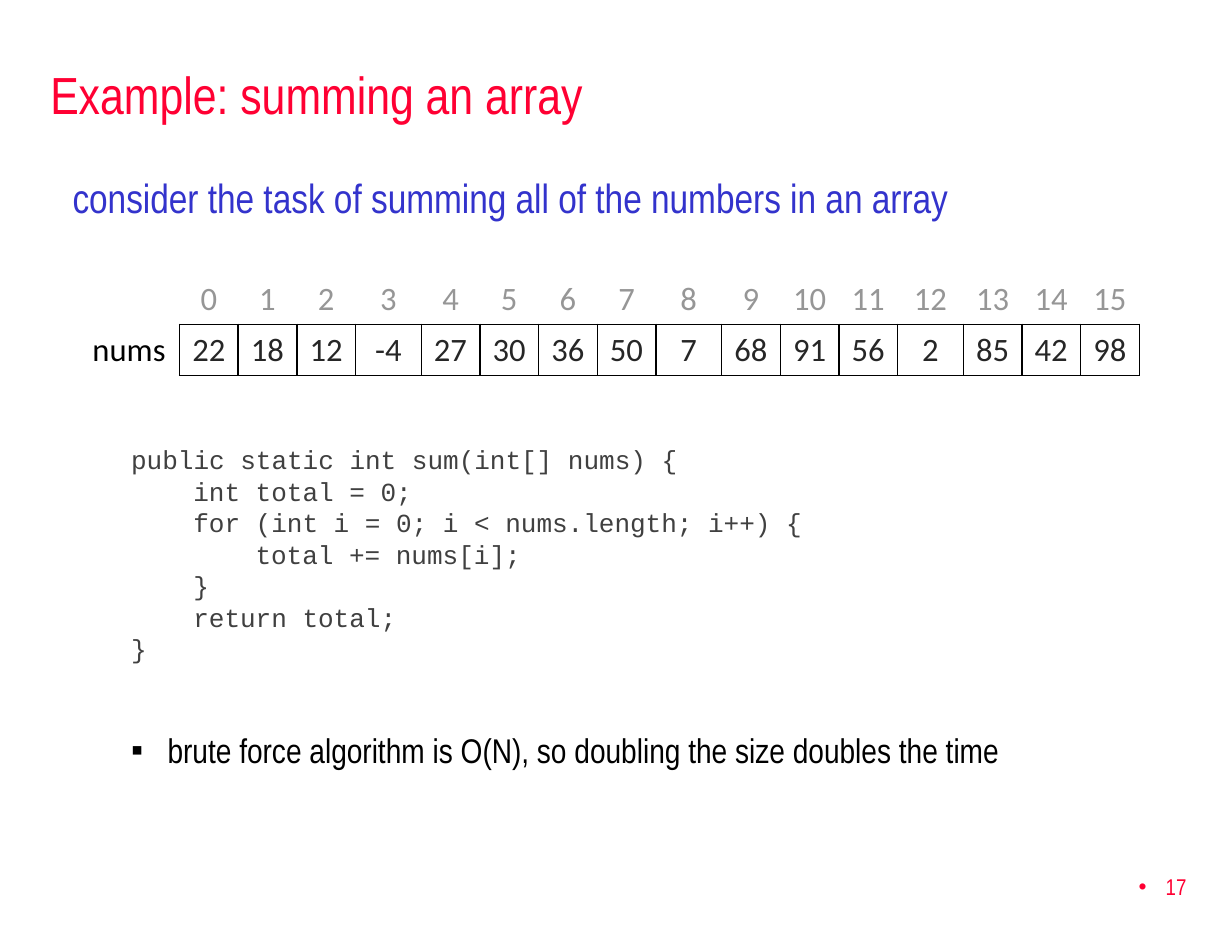
"""Build the slide on summing an array."""
from dataclasses import dataclass

from lxml import etree
from pptx import Presentation
from pptx import util as u
from pptx.dml import color
from pptx.enum import text
from pptx.oxml import ns


@dataclass(frozen=True)
class Theme:
    """Hold the colours, fonts and type sizes."""
    red: str = "FF0033"
    blue: str = "3333CC"
    black: str = "000000"
    ink: str = "262626"
    code: str = "404040"
    grey: str = "969696"
    sans: str = "Arial Narrow"
    mono: str = "Courier New"
    cell: str = "Calibri"
    title: int = 32
    lead: int = 25
    point: int = 21
    table: int = 20
    small: int = 16
    foot: int = 14


class Deck:
    """Draw styled elements on the current slide."""

    def __init__(self, theme, wide, high):
        """Start a file with one blank slide."""
        self.theme = theme
        self.file = Presentation()
        self.file.slide_width = u.Inches(wide)
        self.file.slide_height = u.Inches(high)
        self.slide = self.file.slides.add_slide(self.file.slide_layouts[6])

    def put(self, item, form):
        """Set each format value on an item."""
        for name, value in form.items():
            setattr(item, name, value)

    def line(self, para, words, font, size, tint, form=None):
        """Write one paragraph of a single style."""
        self.put(para, form or {})
        run = para.add_run()
        run.text = words
        self.put(run.font, {"name": font, "size": u.Pt(size), "bold": False})
        run.font.color.rgb = color.RGBColor.from_string(tint)

    def dent(self, para, left, hang=0, mark=None):
        """Indent a paragraph and give it a bullet if asked."""
        props = para._p.get_or_add_pPr()
        props.set("marL", str(u.Inches(left)))
        props.set("indent", str(u.Inches(-hang)))
        if mark:
            etree.SubElement(props, ns.qn("a:buFont")).set("typeface", "Arial")
            etree.SubElement(props, ns.qn("a:buChar")).set("char", mark)

    def box(self, spot, rows, anchor=text.MSO_ANCHOR.TOP):
        """Add a text box of (style, indent) paragraphs."""
        frame = self.slide.shapes.add_textbox(*map(u.Inches, spot)).text_frame
        self.put(frame, {"word_wrap": True, "vertical_anchor": anchor})
        for i, (style, dent) in enumerate(rows):
            para = frame.add_paragraph() if i else frame.paragraphs[0]
            self.line(para, *style)
            self.dent(para, *dent)

    def edge(self, cell, sides):
        """Rule the named sides of a cell and clear the others."""
        props = cell._tc.get_or_add_tcPr()
        for side in "LRTB":
            rule = etree.SubElement(props, ns.qn(f"a:ln{side}"), w=str(u.Pt(1)))
            if side in sides:
                fill = etree.SubElement(rule, ns.qn("a:solidFill"))
                etree.SubElement(fill, ns.qn("a:srgbClr"), val=self.theme.black)
            else:
                etree.SubElement(rule, ns.qn("a:noFill"))

    def grid(self, spot, label, nums, widths, high):
        """Add a table of indexes above a labelled row of values."""
        t = self.theme
        size = sum(widths), 2 * high
        shape = self.slide.shapes.add_table(
            2, len(widths), *map(u.Inches, spot + size))
        table = shape.table
        self.put(table, {"first_row": False, "horz_banding": False})
        for col, wide in zip(table.columns, widths):
            col.width = u.Inches(wide)
        rows = [""] + list(range(len(nums))), [label] + nums
        for r, row in enumerate(rows):
            table.rows[r].height = u.Inches(high)
            for c, value in enumerate(row):
                cell = table.cell(r, c)
                if r:
                    tint, sides = (t.ink, "LRTB") if c else (t.black, "R")
                else:
                    tint, sides = t.grey, "B" if c else ""
                self.edge(cell, sides)
                cell.fill.background()
                self.line(cell.text_frame.paragraphs[0], str(value), t.cell,
                          t.table, tint, {"alignment": text.PP_ALIGN.CENTER})


def main():
    """Lay out the slide and save it."""
    t = Theme()
    deck = Deck(t, 10.5, 8)
    mid = text.MSO_ANCHOR.MIDDLE
    deck.box((0.33, 0.42, 9.92, 0.75),
             [(("Example: summing an array", t.sans, t.title, t.red), (0,))], mid)

    code = [
        (0, "public static int sum(int[] nums) {"),
        (1, "int total = 0;"),
        (1, "for (int i = 0; i < nums.length; i++) {"),
        (2, "total += nums[i];"),
        (1, "}"),
        (1, "return total;"),
        (0, "}"),
    ]
    rows = [(("consider the task of summing all of the numbers in an array",
              t.sans, t.lead, t.blue, {"space_before": u.Pt(5)}), (0.38, 0.38))]
    for i, (depth, words) in enumerate(code):
        form = {"line_spacing": 0.8, "space_before": u.Pt(4 if i else 140)}
        rows.append(((words, t.mono, t.small, t.code, form),
                     (0.5 + 0.53 * depth,)))
    rows.append((("brute force algorithm is O(N), so doubling the size doubles the time",
                  t.sans, t.point, t.black, {"space_before": u.Pt(40)}),
                 (0.81, 0.31, "▪")))
    deck.box((0.52, 1.42, 9.56, 5.92), rows)

    nums = [22, 18, 12, -4, 27, 30, 36, 50, 7, 68, 91, 56, 2, 85, 42, 98]
    widths = [0.86] + [0.56 if i in (3, 8, 12) else 0.5 for i in range(len(nums))]
    deck.grid((0.67, 2.33), "nums", nums, widths, 0.43)

    deck.box((8.02, 7.29, 2.19, 0.53),
             [(("17", t.sans, t.foot, t.red,
                {"alignment": text.PP_ALIGN.RIGHT}), (0.23, 0.23, "•"))], mid)
    deck.file.save("out.pptx")


if __name__ == "__main__":
    main()
